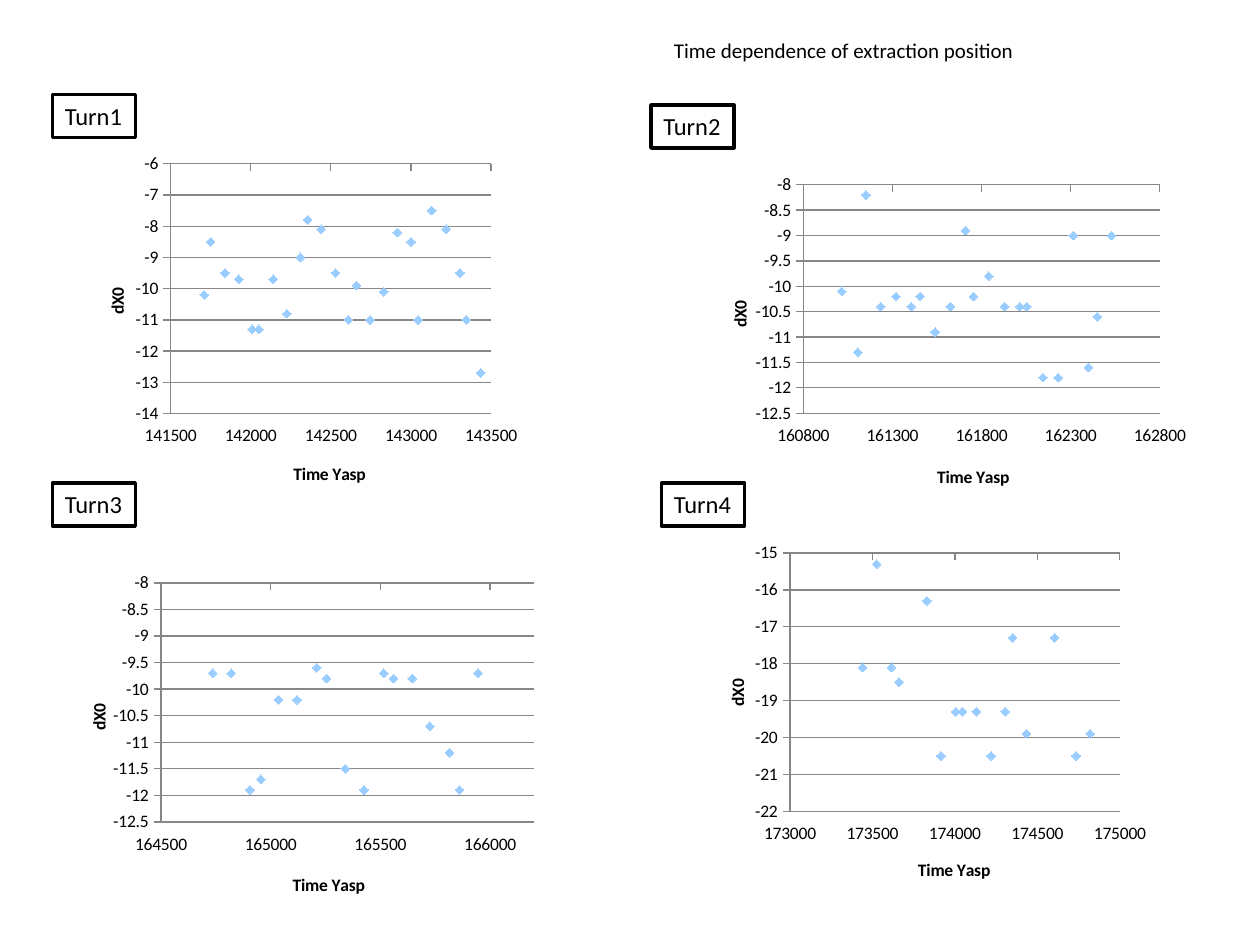
import pptx
import pptx.chart.data
import pptx.dml.color
import pptx.enum.chart
import pptx.enum.shapes
import pptx.enum.text
import pptx.oxml
import pptx.oxml.ns
import pptx.util

TURNS = [
    dict(name="Turn1", tag=(5, 9), box=(7, 14, 43, 34), plot=(0.215, 0.047, 0.71, 0.70),
         time=(141500, 143500), dx=(-14, -6), step=1, dots=[
             (141710, -10.2), (141750, -8.5), (141840, -9.5), (141925, -9.7),
             (142010, -11.3), (142050, -11.3), (142140, -9.7), (142225, -10.8),
             (142310, -9), (142355, -7.8), (142440, -8.1), (142530, -9.5),
             (142610, -11), (142660, -9.9), (142745, -11), (142830, -10.1),
             (142915, -8.2), (143000, -8.5), (143045, -11), (143130, -7.5),
             (143220, -8.1), (143305, -9.5), (143345, -11), (143435, -12.7)]),
    dict(name="Turn2", tag=(62, 10), box=(66, 16, 47.8, 32), plot=(0.22, 0.05, 0.71, 0.68),
         time=(160800, 162800), dx=(-12.5, -8), step=0.5, dots=[
             (161015, -10.1), (161105, -11.3), (161150, -8.2), (161235, -10.4),
             (161320, -10.2), (161405, -10.4), (161455, -10.2), (161540, -10.9),
             (161625, -10.4), (161710, -8.9), (161755, -10.2), (161840, -9.8),
             (161930, -10.4), (162015, -10.4), (162055, -10.4), (162145, -11.8),
             (162230, -11.8), (162315, -9), (162400, -11.6), (162450, -10.6),
             (162530, -9)]),
    dict(name="Turn3", tag=(5, 46), box=(5, 54, 47, 33), plot=(0.22, 0.046, 0.756, 0.69),
         time=(164500, 166200), dx=(-12.5, -8), step=0.5, dots=[
             (164735, -9.7), (164820, -9.7), (164905, -11.9), (164955, -11.7),
             (165035, -10.2), (165120, -10.2), (165210, -9.6), (165255, -9.8),
             (165340, -11.5), (165425, -11.9), (165515, -9.7), (165560, -9.8),
             (165645, -9.8), (165725, -10.7), (165815, -11.2), (165860, -11.9),
             (165945, -9.7)]),
    dict(name="Turn4", tag=(63, 46), box=(66, 51, 44, 34.8), plot=(0.21, 0.048, 0.714, 0.707),
         time=(173000, 175000), dx=(-22, -15), step=1, dots=[
             (173440, -18.1), (173525, -15.3), (173615, -18.1), (173660, -18.5),
             (173830, -16.3), (173915, -20.5), (174005, -19.3), (174045, -19.3),
             (174130, -19.3), (174220, -20.5), (174305, -19.3), (174350, -17.3),
             (174435, -19.9), (174605, -17.3), (174735, -20.5), (174820, -19.9)]),
]


def tint(code):
    """Turn a hex string into a colour."""
    return pptx.dml.color.RGBColor.from_string(code)


def place(node, index, **shares):
    """Set the manual layout of a chart part in shares of the chart."""
    tag = pptx.oxml.ns.qn("c:layout")
    for old in node.findall(tag):
        node.remove(old)
    inner = '<c:layoutTarget val="inner"/>' if "w" in shares else ""
    modes = "".join(f'<c:{key}Mode val="edge"/>' for key in "xy")
    sizes = "".join(f'<c:{key} val="{val}"/>' for key, val in shares.items())
    node.insert(index, pptx.oxml.parse_xml(
        f'<c:layout {pptx.oxml.ns.nsdecls("c")}><c:manualLayout>'
        f'{inner}{modes}{sizes}</c:manualLayout></c:layout>'))


class Page:
    """Style and slide, on a grid of 120 columns by 90 rows."""

    font, ink, paper, dot, rule = "Calibri", "000000", "FFFFFF", "99CCFF", "868686"

    def __init__(self, deck):
        """Add a blank slide and size the grid."""
        self.cell = deck.slide_width / 120
        self.shapes = deck.slides.add_slide(deck.slide_layouts[6]).shapes

    def span(self, *cells):
        """Turn grid cells into lengths."""
        return [round(cell * self.cell) for cell in cells]

    def style(self, font, size, bold=False):
        """Apply the common font."""
        font.name, font.size, font.bold = self.font, pptx.util.Pt(size), bold
        font.color.rgb = tint(self.ink)

    def fill(self, shape, words, size):
        """Put one unwrapped line of text in a shape."""
        frame = shape.text_frame
        frame.word_wrap = False
        frame.auto_size = pptx.enum.text.MSO_AUTO_SIZE.SHAPE_TO_FIT_TEXT
        frame.vertical_anchor = pptx.enum.text.MSO_ANCHOR.TOP
        frame.text = words
        line = frame.paragraphs[0]
        line.alignment = pptx.enum.text.PP_ALIGN.LEFT
        self.style(line.font, size)

    def text(self, words, box, size):
        """Add a plain text box."""
        self.fill(self.shapes.add_textbox(*self.span(*box)), words, size)

    def label(self, words, spot):
        """Add a framed label."""
        shape = self.shapes.add_shape(pptx.enum.shapes.MSO_SHAPE.RECTANGLE,
                                      *self.span(*spot, 7.9, 4.1))
        shape.shadow.inherit = False
        shape.fill.solid()
        shape.fill.fore_color.rgb = tint(self.paper)
        shape.line.color.rgb = tint(self.ink)
        shape.line.width = pptx.util.Pt(2)
        self.fill(shape, words, 14)

    def axis(self, axis, title, spot, ends, step, turn=0):
        """Scale, title and style one axis."""
        axis.minimum_scale, axis.maximum_scale = ends
        axis.major_unit = step
        axis.major_tick_mark = pptx.enum.chart.XL_TICK_MARK.OUTSIDE
        axis.minor_tick_mark = pptx.enum.chart.XL_TICK_MARK.NONE
        axis.tick_label_position = pptx.enum.chart.XL_TICK_LABEL_POSITION.LOW
        axis.tick_labels.number_format = "General"
        axis.tick_labels.number_format_is_linked = False
        axis.format.line.color.rgb = tint(self.rule)
        frame = axis.axis_title.text_frame
        frame.text = title
        frame._txBody.bodyPr.set("rot", str(turn))
        self.style(frame.paragraphs[0].font, 10, True)
        place(axis.axis_title._element, 1, x=spot[0], y=spot[1])

    def chart(self, turn):
        """Add the scatter chart of one turn."""
        data = pptx.chart.data.XyChartData()
        series = data.add_series("Series 1")
        for time, dx in turn["dots"]:
            series.add_data_point(time, dx)
        chart = self.shapes.add_chart(pptx.enum.chart.XL_CHART_TYPE.XY_SCATTER,
                                      *self.span(*turn["box"]), data).chart
        chart.has_title = chart.has_legend = False
        self.style(chart.font, 10)
        plot = chart.plots[0]
        plot.vary_by_categories = False
        dots = plot.series[0]
        dots.smooth = False
        dots.format.line.fill.background()
        mark = dots.marker
        mark.style = pptx.enum.chart.XL_MARKER_STYLE.DIAMOND
        mark.size = 5
        mark.format.fill.solid()
        mark.format.fill.fore_color.rgb = tint(self.dot)
        mark.format.line.color.rgb = tint(self.dot)
        across, down = chart.category_axis, chart.value_axis
        across.has_major_gridlines, down.has_major_gridlines = False, True
        down.major_gridlines.format.line.color.rgb = tint(self.rule)
        self.axis(across, "Time Yasp", (0.48, 0.875), turn["time"], 500)
        self.axis(down, "dX0", (0.065, 0.385), turn["dx"], turn["step"], -5400000)
        place(chart._chartSpace.chart.plotArea, 0, **dict(zip("xywh", turn["plot"])))


def main():
    """Build the slide."""
    deck = pptx.Presentation()
    deck.slide_width, deck.slide_height = pptx.util.Inches(10), pptx.util.Inches(7.5)
    page = Page(deck)
    for turn in TURNS:
        page.label(turn["name"], turn["tag"])
    page.text("Time dependence of extraction position", (63, 3, 35.2, 3.6), 12)
    for turn in TURNS:
        page.chart(turn)
    deck.save("out.pptx")


if __name__ == "__main__":
    main()
